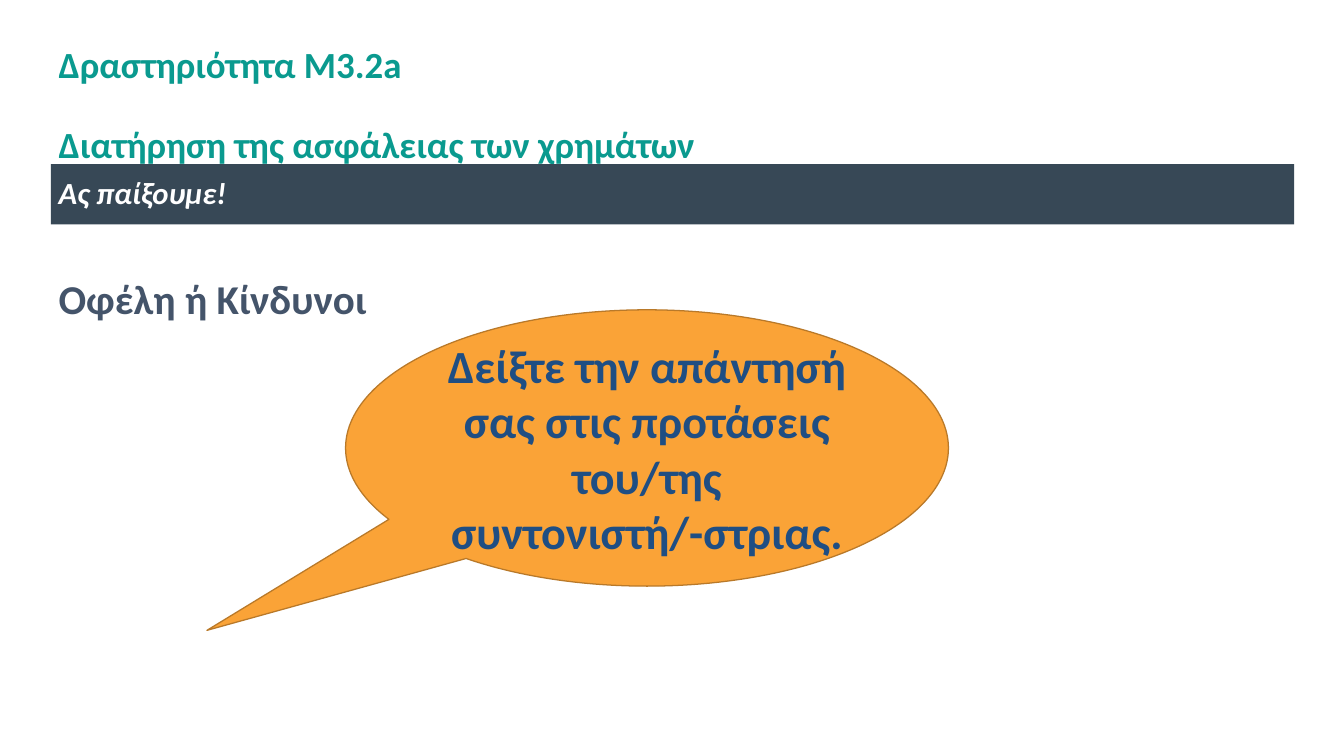
from dataclasses import dataclass

from pptx import Presentation
from pptx import util as u
from pptx.dml.color import RGBColor
from pptx.enum import shapes, text

PX = u.Inches(1) // 96


@dataclass(frozen=True)
class Theme:
    font: str = "Calibri"
    teal: str = "0A9A8F"
    slate: str = "44546A"
    navy: str = "374856"
    white: str = "FFFFFF"
    orange: str = "FAA337"
    brown: str = "B97929"
    blue: str = "1F4E83"
    title_size: float = 28.8
    bar_size: float = 24
    heading_size: float = 32
    callout_size: float = 36


@dataclass(frozen=True)
class Box:
    left: int
    top: int
    width: int
    height: int

    def emu(self) -> tuple[int, int, int, int]:
        return self.left * PX, self.top * PX, self.width * PX, self.height * PX


@dataclass(frozen=True)
class Label:
    lines: tuple[str, ...]
    size: float
    color: str
    align: text.PP_ALIGN = text.PP_ALIGN.JUSTIFY
    anchor: text.MSO_ANCHOR = text.MSO_ANCHOR.MIDDLE
    italic: bool = False
    spacing: float = 1.0
    gap: float = 0
    inset: int = 8


THEME = Theme()
TITLE = Label(("Δραστηριότητα M3.2a", "Διατήρηση της ασφάλειας των χρημάτων"),
              THEME.title_size, THEME.teal, text.PP_ALIGN.LEFT, spacing=0.9, gap=31.2)
BAR = Label(("Ας παίξουμε!",), THEME.bar_size, THEME.white, italic=True, spacing=0.9)
HEADING = Label(("Οφέλη ή Κίνδυνοι",), THEME.heading_size, THEME.slate,
                anchor=text.MSO_ANCHOR.TOP)
CALLOUT = Label(("Δείξτε την απάντησή σας στις προτάσεις του/της συντονιστή/-στριας.",),
                THEME.callout_size, THEME.blue, text.PP_ALIGN.CENTER, inset=10)


def write(sp, label: Label) -> None:
    tf = sp.text_frame
    tf.word_wrap = True
    tf.vertical_anchor = label.anchor
    tf.margin_left = tf.margin_right = label.inset * PX
    tf.margin_top = tf.margin_bottom = 5 * PX
    for i, line in enumerate(label.lines):
        p = tf.add_paragraph() if i else tf.paragraphs[0]
        p.alignment = label.align
        p.line_spacing = label.spacing
        if i:
            p.space_before = u.Pt(label.gap)
        r = p.add_run()
        r.text = line
        r.font.name = THEME.font
        r.font.size = u.Pt(label.size)
        r.font.bold = True
        r.font.italic = label.italic
        r.font.color.rgb = RGBColor.from_string(label.color)


def add_text(s, box: Box, label: Label) -> None:
    write(s.shapes.add_textbox(*box.emu()), label)


def add_filled(s, kind: shapes.MSO_SHAPE, box: Box, label: Label, fill: str,
               line: str | None = None, adjustments: tuple[float, ...] = ()) -> None:
    sp = s.shapes.add_shape(kind, *box.emu())
    sp.shadow.inherit = False
    for i, value in enumerate(adjustments):
        sp.adjustments[i] = value
    sp.fill.solid()
    sp.fill.fore_color.rgb = RGBColor.from_string(fill)
    if line:
        sp.line.color.rgb = RGBColor.from_string(line)
        sp.line.width = u.Pt(1)
    else:
        sp.line.fill.background()
    write(sp, label)


def main() -> None:
    prs = Presentation()
    prs.slide_width, prs.slide_height = 1400 * PX, 788 * PX
    s = prs.slides.add_slide(prs.slide_layouts[6])
    add_text(s, Box(53, 280, 1295, 467), HEADING)
    add_text(s, Box(53, 48, 1294, 126), TITLE)
    add_filled(s, shapes.MSO_SHAPE.RECTANGLE, Box(53, 171, 1295, 63), BAR, THEME.navy)
    add_filled(s, shapes.MSO_SHAPE.OVAL_CALLOUT, Box(360, 323, 628, 288), CALLOUT,
               THEME.orange, THEME.brown, (-0.73, 0.66))
    prs.save("out.pptx")


if __name__ == "__main__":
    main()
